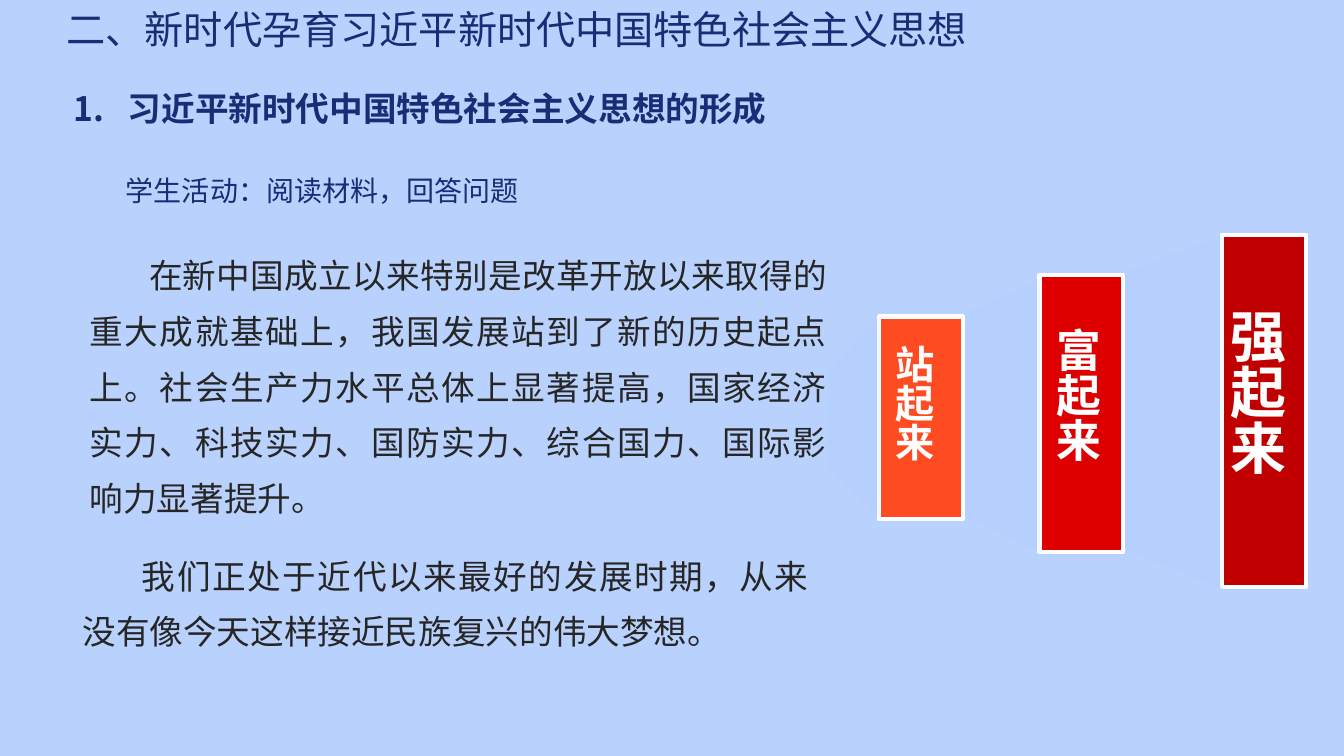
from lxml import etree
from pptx import Presentation
from pptx import util as u
from pptx.dml.color import RGBColor
from pptx.enum import shapes, text
from pptx.oxml.ns import qn

PX = 9144  # 100 px to the inch
HUES = {"back": "B9D2FD", "navy": "192C76", "ink": "262626", "white": "FFFFFF",
        "fan": "99C2FD", "deep": "C00000", "red": "DE0000", "orange": "FF4B21"}
SANS, BOLD = "Noto Sans CJK SC", "Noto Sans CJK JP"

TITLE = ("二、新时代孕育习近平新时代中国特色社会主义思想", (56, 0, 914, 57))
# words, box, size, bold, hue
HEADS = [
    ("1.\t习近平新时代中国特色社会主义思想的形成", (63, 82, 1031, 50), 24, True, "navy"),
    ("学生活动：阅读材料，回答问题", (115, 167, 989, 44), 20, False, "navy"),
]
TAB = 54
BODY = [
    ("在新中国成立以来特别是改革开放以来取得的重大成就基础上，我国发展站到了新的历史起点上。"
     "社会生产力水平总体上显著提高，国家经济实力、科技实力、国防实力、综合国力、国际影响力显著提升。",
     (79, 233, 751, 390)),
    ("我们正处于近代以来最好的发展时期，从来没有像今天这样接近民族复兴的伟大梦想。",
     (72, 531, 740, 122)),
]
INDENT, LEAD = 59, 39.8
# hue, banner box, corners of the fan to its left
STEPS = [
    ("deep", (1212, 233, 83, 349), [(1213, 233), (1213, 585), (1108, 542), (1108, 273)]),
    ("red", (1031, 273, 83, 275), [(1032, 276), (1032, 548), (955, 510), (955, 312)]),
    ("orange", (872, 314, 83, 201), [(873, 314), (873, 514), (821, 462), (821, 367)]),
]
LABELS = [
    ("站起来", (867, 332, 67, 154), 28),
    ("富起来", (1026, 316, 74, 184), 32),
    ("强起来", (1197, 296, 87, 205), 40),
]


def rgb(hue):
    return RGBColor.from_string(HUES[hue])


def put(obj, vals):
    for key, val in vals.items():
        setattr(obj, key, val)


def emu(box):
    return [n * PX for n in box]


def write(frame, words, size, hue, bold=False, face=SANS, tab=None, wrap=True):
    """Fill a text frame with one styled paragraph and return the paragraph."""
    put(frame, {"word_wrap": wrap, "auto_size": text.MSO_AUTO_SIZE.NONE,
                "vertical_anchor": text.MSO_ANCHOR.TOP})
    para = frame.paragraphs[0]
    para.alignment = text.PP_ALIGN.LEFT
    if tab:
        stops = etree.SubElement(para._p.get_or_add_pPr(), qn("a:tabLst"))
        etree.SubElement(stops, qn("a:tab"), pos=str(tab * PX), algn="l")
    run = para.add_run()
    run.text = words
    put(run.font, {"size": u.Pt(size), "bold": bold, "name": face})
    run.font.color.rgb = rgb(hue)
    latin = run._r.rPr.find(qn("a:latin"))
    latin.addnext(latin.makeelement(qn("a:ea"), {"typeface": face}))
    return para


def paint(shape, hue):
    shape.shadow.inherit = False
    shape.fill.solid()
    shape.fill.fore_color.rgb = rgb(hue)


def main():
    deck = Presentation()
    put(deck, {"slide_width": 1333 * PX, "slide_height": 750 * PX})
    slide = deck.slides.add_slide(deck.slide_layouts[5])
    slide.background.fill.solid()
    slide.background.fill.fore_color.rgb = rgb("back")
    items = slide.shapes

    words, box = TITLE
    put(items.title, dict(zip(("left", "top", "width", "height"), emu(box))))
    write(items.title.text_frame, words, 28, "navy", wrap=False)

    for words, box, size, bold, hue in HEADS:
        frame = items.add_textbox(*emu(box)).text_frame
        write(frame, words, size, hue, bold, tab=TAB if "\t" in words else None)

    for words, box in BODY:
        para = write(items.add_textbox(*emu(box)).text_frame, words, 24, "ink")
        put(para, {"alignment": text.PP_ALIGN.JUSTIFY, "line_spacing": u.Pt(LEAD)})
        para._p.get_or_add_pPr().set("indent", str(INDENT * PX))

    for hue, box, fan in STEPS:
        banner = items.add_shape(shapes.MSO_SHAPE.RECTANGLE, *emu(box))
        paint(banner, hue)
        banner.line.color.rgb = rgb("white")
        banner.line.width = u.Pt(3)
        path = items.build_freeform(*fan[0], scale=PX)
        path.add_line_segments(fan[1:], close=True)
        glow = path.convert_to_shape()
        paint(glow, "fan")
        glow.line.fill.background()
        tone = glow._element.spPr.find(qn("a:solidFill"))[0]
        etree.SubElement(tone, qn("a:alpha"), val="10000")

    for words, box, size in LABELS:
        frame = items.add_textbox(*emu(box)).text_frame
        write(frame, words, size, "white", True, BOLD)
        frame._txBody.bodyPr.set("vert", "eaVert")

    deck.save("out.pptx")


if __name__ == "__main__":
    main()
